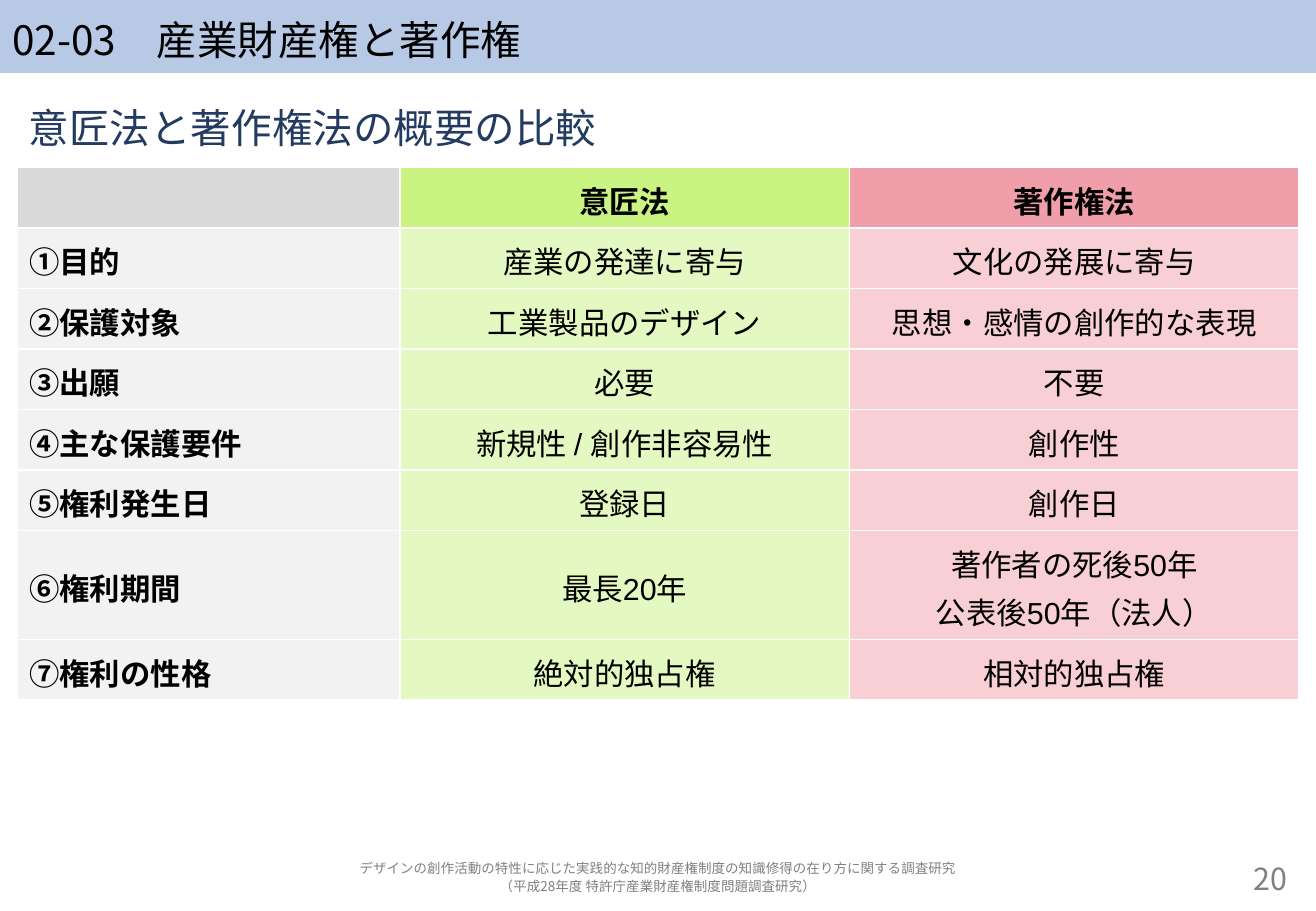
from lxml.etree import SubElement
from pptx import Presentation
from pptx.dml.color import RGBColor
from pptx.enum.text import MSO_ANCHOR as Anchor, MSO_AUTO_SIZE as AutoSize, PP_ALIGN as Align
from pptx.oxml.ns import qn
from pptx.util import Inches, Pt

COLUMN_WIDTHS = [3.15, 3.7, 3.7]
ROW_HEIGHT, TALL_ROW_HEIGHT = 0.47, 0.79
HEADER_FILLS = ["D9D9D9", "C9F482", "F09FAA"]
BODY_FILLS = ["F2F2F2", "E4F9C1", "F8CFD5"]
COMPARISON = [
    ["", "意匠法", "著作権法"],
    ["①目的", "産業の発達に寄与", "文化の発展に寄与"],
    ["②保護対象", "工業製品のデザイン", "思想・感情の創作的な表現"],
    ["③出願", "必要", "不要"],
    ["④主な保護要件", "新規性 / 創作非容易性", "創作性"],
    ["⑤権利発生日", "登録日", "創作日"],
    ["⑥権利期間", "最長20年", "著作者の死後50年\n公表後50年（法人）"],
    ["⑦権利の性格", "絶対的独占権", "相対的独占権"],
]


def color(hex_string):
    return RGBColor.from_string(hex_string)


class SlideBuilder:
    """Holds the shared style and the current slide, and adds its elements."""

    font = "Noto Sans CJK JP"
    table_font = "Arial"
    line_spacing = 1.1

    def __init__(self, presentation):
        self.slide = presentation.slides.add_slide(presentation.slide_layouts[5])

    def set_text(self, text_frame, text, size, hex_string="000000", align=Align.LEFT,
                 font=None, bold=False, space_before=0):
        text_frame.text = text
        text_frame.word_wrap = True
        for paragraph in text_frame.paragraphs:
            paragraph.alignment = align
            paragraph.line_spacing = self.line_spacing
            paragraph.space_before = Pt(space_before)
            for run in paragraph.runs:
                run.font.name = font or self.font
                run.font.size = Pt(size)
                run.font.bold = bold
                run.font.color.rgb = color(hex_string)
                properties = run._r.get_or_add_rPr()
                SubElement(properties, qn("a:ea")).set("typeface", self.font)

    def title(self, text, box, fill):
        title = self.slide.shapes.title
        title.left, title.top, title.width, title.height = map(Inches, box)
        title.fill.solid()
        title.fill.fore_color.rgb = color(fill)
        self.set_text(title.text_frame, text, 24)
        title.text_frame.auto_size = AutoSize.NONE
        title.text_frame.vertical_anchor = Anchor.MIDDLE

    def text(self, text, box, size, hex_string, anchor=Anchor.MIDDLE, **style):
        text_frame = self.slide.shapes.add_textbox(*map(Inches, box)).text_frame
        self.set_text(text_frame, text, size, hex_string, **style)
        text_frame.vertical_anchor = anchor

    def cell_borders(self, cell, hex_string="FFFFFF", width=1):
        properties = cell._tc.get_or_add_tcPr()
        for index, side in enumerate(("a:lnL", "a:lnR", "a:lnT", "a:lnB")):
            line = properties.makeelement(qn(side), {"w": str(Pt(width))})
            fill = SubElement(line, qn("a:solidFill"))
            SubElement(fill, qn("a:srgbClr")).set("val", hex_string)
            properties.insert(index, line)

    def table(self, rows, left, top):
        heights = [TALL_ROW_HEIGHT if any("\n" in text for text in row) else ROW_HEIGHT
                   for row in rows]
        table = self.slide.shapes.add_table(
            len(rows), len(COLUMN_WIDTHS), Inches(left), Inches(top),
            Inches(sum(COLUMN_WIDTHS)), Inches(sum(heights))).table
        for column, width in zip(table.columns, COLUMN_WIDTHS):
            column.width = Inches(width)
        for row_index, texts in enumerate(rows):
            table.rows[row_index].height = Inches(heights[row_index])
            fills = BODY_FILLS if row_index else HEADER_FILLS
            for column_index, text in enumerate(texts):
                cell = table.cell(row_index, column_index)
                cell.fill.solid()
                cell.fill.fore_color.rgb = color(fills[column_index])
                cell.vertical_anchor = Anchor.MIDDLE
                self.cell_borders(cell)
                self.set_text(cell.text_frame, text, 18, font=self.table_font,
                              align=Align.CENTER if column_index else Align.LEFT,
                              bold=row_index == 0 or column_index == 0)


def main():
    presentation = Presentation()
    presentation.slide_width = Inches(10.83)
    presentation.slide_height = Inches(7.5)
    builder = SlideBuilder(presentation)
    builder.title("02-03　産業財産権と著作権", (0, 0, 10.83, 0.6), "B7C9E5")
    builder.table(COMPARISON, 0.14, 1.38)
    builder.text("意匠法と著作権法の概要の比較", (0.14, 0.76, 10.55, 0.47), 24, "233B61",
                 anchor=Anchor.TOP, space_before=4.8)
    builder.text("20", (9.35, 7.06, 1.34, 0.31), 18, "808080", align=Align.RIGHT)
    builder.text("デザインの創作活動の特性に応じた実践的な知的財産権制度の知識修得の在り方に関する調査研究\n"
                 "（平成28年度 特許庁産業財産権制度問題調査研究）",
                 (0.14, 7.06, 10.55, 0.31), 8, "808080", align=Align.CENTER)
    presentation.save("out.pptx")


if __name__ == "__main__":
    main()
